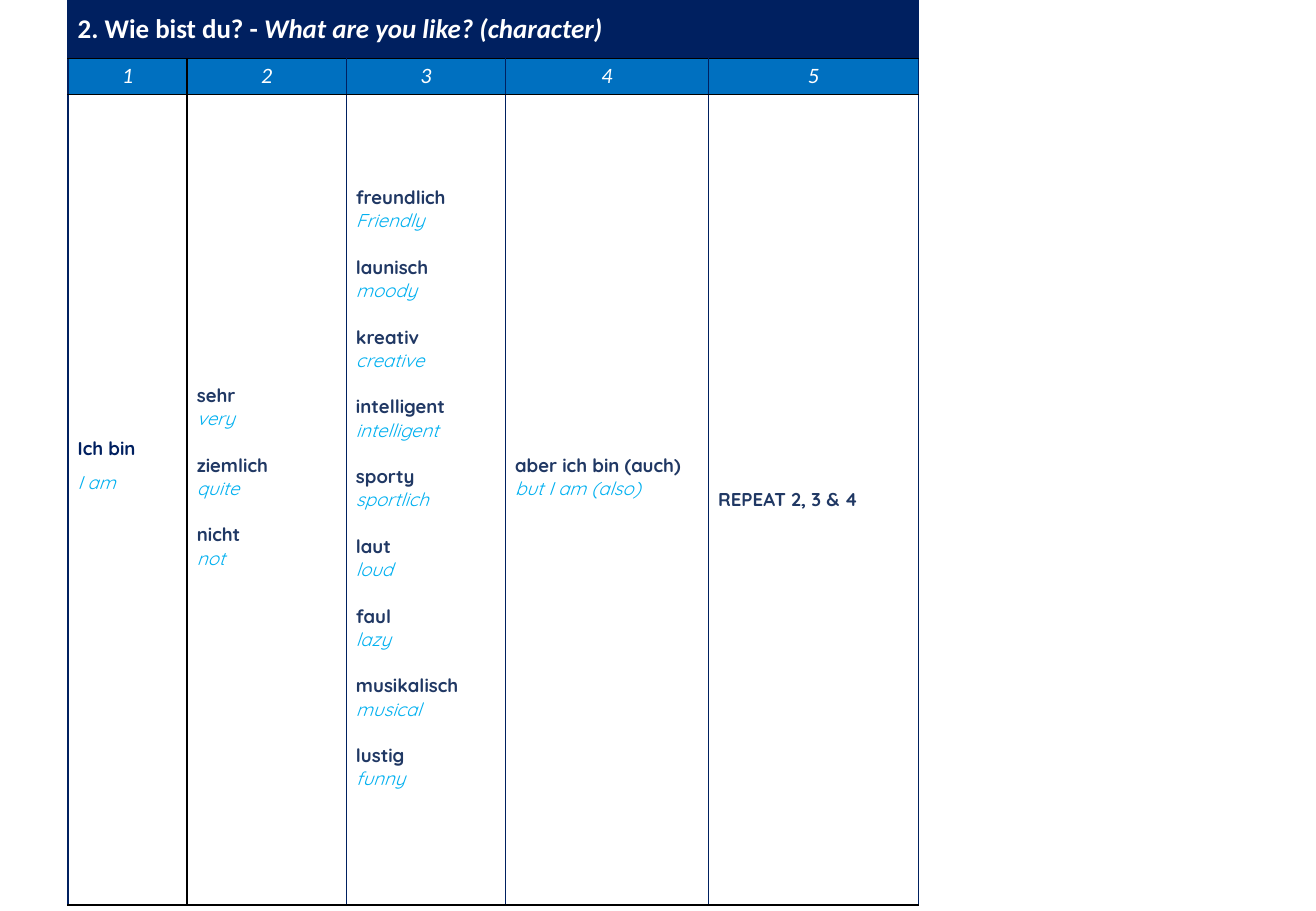
from lxml import etree
from pptx import Presentation
from pptx.dml.color import RGBColor
from pptx.enum.text import MSO_ANCHOR, PP_ALIGN
from pptx.oxml.ns import qn
from pptx.util import Inches, Pt

MIDDLE, TOP = MSO_ANCHOR.MIDDLE, MSO_ANCHOR.TOP
LEFT, CENTER = PP_ALIGN.LEFT, PP_ALIGN.CENTER

NAVY = RGBColor(0x00, 0x20, 0x60)
SLATE = RGBColor(0x20, 0x38, 0x64)
BLUE = RGBColor(0x00, 0x70, 0xC0)
SKY = RGBColor(0x00, 0xB0, 0xF0)
WHITE = RGBColor(0xFF, 0xFF, 0xFF)
BLACK = RGBColor(0x00, 0x00, 0x00)

TITLE = ("2. Wie bist du? - ", "What are you like? (character)")
COLUMNS = [
    {"width": 0.98, "bottom": 0.7, "color": NAVY, "spacing": 1.5,
     "phrases": [("Ich bin", "I am")]},
    {"width": 1.31, "bottom": 0.42,
     "phrases": [("sehr", "very"), ("ziemlich", "quite"), ("nicht", "not")]},
    {"width": 1.31, "bottom": 0.23,
     "phrases": [("freundlich", "Friendly"), ("launisch", "moody"),
                 ("kreativ", "creative"), ("intelligent", "intelligent"),
                 ("sporty", "sportlich"), ("laut", "loud"), ("faul", "lazy"),
                 ("musikalisch", "musical"), ("lustig", "funny")]},
    {"width": 1.67, "bottom": 0.42,
     "phrases": [("aber ich bin (auch)", "but I am (also)")]},
    {"width": 1.73, "bottom": 0.04, "phrases": [("REPEAT 2, 3 & 4",)]},
]
ROW_HEIGHTS = [0.48, 0.28, 6.67]
VERTICAL_RULES = [NAVY, BLACK, NAVY, NAVY, NAVY, NAVY]
HORIZONTAL_RULES = [NAVY, BLACK, BLACK, BLACK]
PHRASE_GAP = Pt(13.75)


def add_span(para, text, size=11, font="Quicksand", color=SLATE, bold=False, italic=False):
    span = para.add_run()
    span.text = text
    span.font.size = Pt(size)
    span.font.name = font
    span.font.color.rgb = color
    span.font.bold = bold
    span.font.italic = italic


def add_border(cell, side, color):
    line = etree.SubElement(cell._tc.get_or_add_tcPr(), qn("a:" + side), w=str(Pt(1)))
    fill = etree.SubElement(line, qn("a:solidFill"))
    etree.SubElement(fill, qn("a:srgbClr"), val=str(color))


def style_cell(cell, row, column, fill=None, anchor=MIDDLE, top=0.04, bottom=0.04):
    add_border(cell, "lnL", VERTICAL_RULES[0 if row == 0 else column])
    add_border(cell, "lnR", VERTICAL_RULES[-1 if row == 0 else column + 1])
    add_border(cell, "lnT", HORIZONTAL_RULES[row])
    add_border(cell, "lnB", HORIZONTAL_RULES[row + 1])
    if fill is None:
        cell.fill.background()
    else:
        cell.fill.solid()
        cell.fill.fore_color.rgb = fill
    cell.vertical_anchor = anchor
    cell.margin_left = cell.margin_right = Inches(0.08)
    cell.margin_top, cell.margin_bottom = Inches(top), Inches(bottom)


def fill_phrases(cell, column):
    frame = cell.text_frame
    for index, phrase in enumerate(column["phrases"]):
        for part, text in enumerate(phrase):
            first = index == 0 and part == 0
            para = frame.paragraphs[0] if first else frame.add_paragraph()
            para.alignment = LEFT
            para.line_spacing = column.get("spacing", 1.0)
            if index > 0 and part == 0:
                para.space_before = PHRASE_GAP
            color = column.get("color", SLATE) if part == 0 else SKY
            add_span(para, text, color=color, bold=part == 0, italic=part == 1)


def main():
    deck = Presentation()
    deck.slide_width, deck.slide_height = Inches(10.83), Inches(7.5)
    page = deck.slides.add_slide(deck.slide_layouts[6])
    width = sum(column["width"] for column in COLUMNS)
    table = page.shapes.add_table(
        len(ROW_HEIGHTS), len(COLUMNS), Inches(0.56), Inches(0),
        Inches(width), Inches(sum(ROW_HEIGHTS))).table
    table.first_row = table.horz_banding = False
    for row, height in zip(table.rows, ROW_HEIGHTS):
        row.height = Inches(height)

    for index, column in enumerate(COLUMNS):
        table.columns[index].width = Inches(column["width"])
        title, number, words = [table.cell(row, index) for row in range(3)]
        style_cell(title, 0, index, fill=NAVY, top=0.05, bottom=0.05)
        style_cell(number, 1, index, fill=BLUE, anchor=TOP)
        style_cell(words, 2, index, bottom=column["bottom"])
        para = number.text_frame.paragraphs[0]
        para.alignment = CENTER
        add_span(para, str(index + 1), size=13, font="Calibri", color=WHITE, italic=True)
        fill_phrases(words, column)

    heading = table.cell(0, 0)
    heading.merge(table.cell(0, len(COLUMNS) - 1))
    for part, text in enumerate(TITLE):
        add_span(heading.text_frame.paragraphs[0], text, size=16, font="Calibri",
                 color=WHITE, bold=True, italic=part == 1)
    deck.save("out.pptx")


if __name__ == "__main__":
    main()
